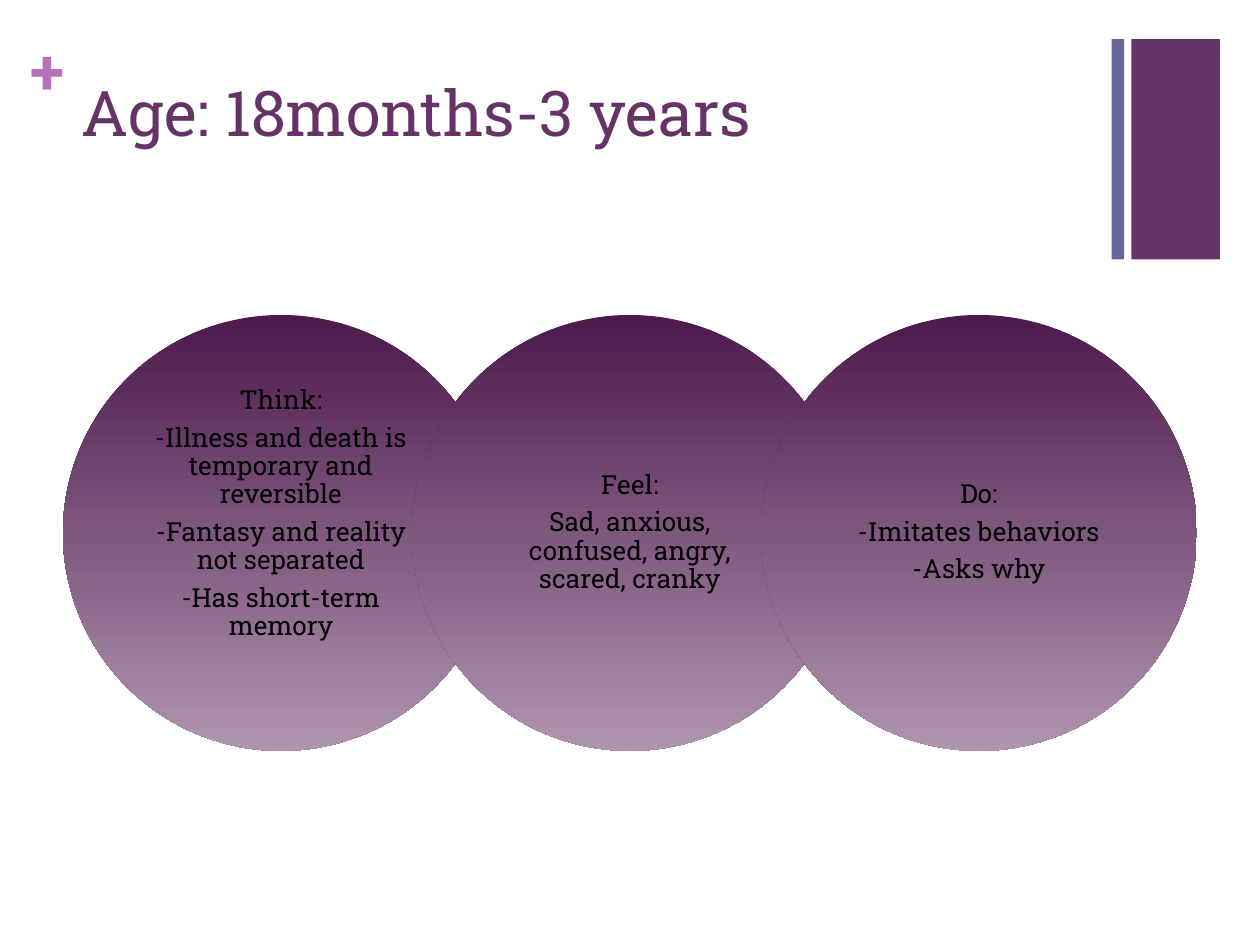
from dataclasses import dataclass

from pptx import Presentation
from pptx.dml.color import RGBColor
from pptx.enum import shapes, text
from pptx.util import Pt


@dataclass(frozen=True)
class Theme:
    """Hold the colours, font and type sizes of the slide."""

    font: str = "Roboto Slab"
    plum: str = "663366"
    slate: str = "666699"
    orchid: str = "B870B8"
    black: str = "000000"
    circle_top: str = "4D1A4D"
    circle_bottom: str = "AF94AF"
    title_size: float = 36
    body_size: float = 15


THEME = Theme()
CIRCLE_LEFT, CIRCLE_TOP, CIRCLE_SIZE, CIRCLE_PITCH = 36, 180, 249.1, 199.4
CIRCLES = [
    (
        [
            "Think:",
            "-Illness and death is temporary and reversible",
            "-Fantasy and reality not separated",
            "-Has short-term memory",
        ],
        23,
    ),
    (["Feel:", "Sad, anxious, confused, angry, scared, cranky"], 1.5),
    (["Do:", "-Imitates behaviors", "-Asks why"], 1.5),
]


def write_text(shape, lines, *, size, color, bold=False, align=text.PP_ALIGN.LEFT,
               anchor=text.MSO_ANCHOR.TOP, insets=(7.2, 3.6, 7.2, 3.6),
               line_spacing=1.0, space_after=0):
    """Write one paragraph per line into a shape with the given format."""
    frame = shape.text_frame
    frame.word_wrap = True
    frame.vertical_anchor = anchor
    frame.margin_left, frame.margin_top, frame.margin_right, frame.margin_bottom = map(Pt, insets)
    frame.text = "\n".join(lines)
    for paragraph in frame.paragraphs:
        paragraph.alignment = align
        paragraph.line_spacing = line_spacing
        paragraph.space_after = Pt(space_after)
        font = paragraph.runs[0].font
        font.name, font.size, font.bold = THEME.font, Pt(size), bold
        font.color.rgb = RGBColor.from_string(color)


def add_text(slide, box, line, **text_format):
    """Add a text box holding one line."""
    write_text(slide.shapes.add_textbox(*map(Pt, box)), [line], **text_format)


def add_plain_shape(slide, kind, box):
    """Add a preset shape without outline or shadow."""
    shape = slide.shapes.add_shape(kind, *map(Pt, box))
    shape.shadow.inherit = False
    shape.line.fill.background()
    return shape


def add_bar(slide, box, color):
    """Add a solid decorative bar."""
    shape = add_plain_shape(slide, shapes.MSO_SHAPE.RECTANGLE, box)
    shape.fill.solid()
    shape.fill.fore_color.rgb = RGBColor.from_string(color)


def add_circle(slide, left, lines, bottom_inset):
    """Add a gradient circle with centred text."""
    box = (left, CIRCLE_TOP, CIRCLE_SIZE, CIRCLE_SIZE)
    shape = add_plain_shape(slide, shapes.MSO_SHAPE.OVAL, box)
    shape.fill.gradient()
    shape.fill.gradient_angle = 270
    colors = (THEME.circle_top, THEME.circle_bottom)
    for position, (stop, color) in enumerate(zip(shape.fill.gradient_stops, colors)):
        stop.position = position
        stop.color.rgb = RGBColor.from_string(color)
    write_text(shape, lines, size=THEME.body_size, color=THEME.black,
               align=text.PP_ALIGN.CENTER, anchor=text.MSO_ANCHOR.MIDDLE,
               insets=(13.7, 1.5, 13.7, bottom_inset),
               line_spacing=0.9, space_after=0.35 * THEME.body_size)


def main():
    """Build and save the slide."""
    presentation = Presentation()
    presentation.slide_width, presentation.slide_height = Pt(720), Pt(540)
    slide = presentation.slides.add_slide(presentation.slide_layouts[6])
    add_bar(slide, (646.5, 22.3, 50.6, 126), THEME.plum)
    add_text(slide, (17.3, 18, 20.9, 43.9), "+", size=THEME.title_size,
             color=THEME.orchid, bold=True, insets=(0, 0, 0, 0))
    add_bar(slide, (635.2, 22.3, 7.2, 126), THEME.slate)
    add_text(slide, (39.6, 38.2, 594.7, 87.8), "Age: 18months-3 years",
             size=THEME.title_size, color=THEME.plum)
    for index, (lines, bottom_inset) in enumerate(CIRCLES):
        add_circle(slide, CIRCLE_LEFT + index * CIRCLE_PITCH, lines, bottom_inset)
    presentation.save("out.pptx")


if __name__ == "__main__":
    main()
